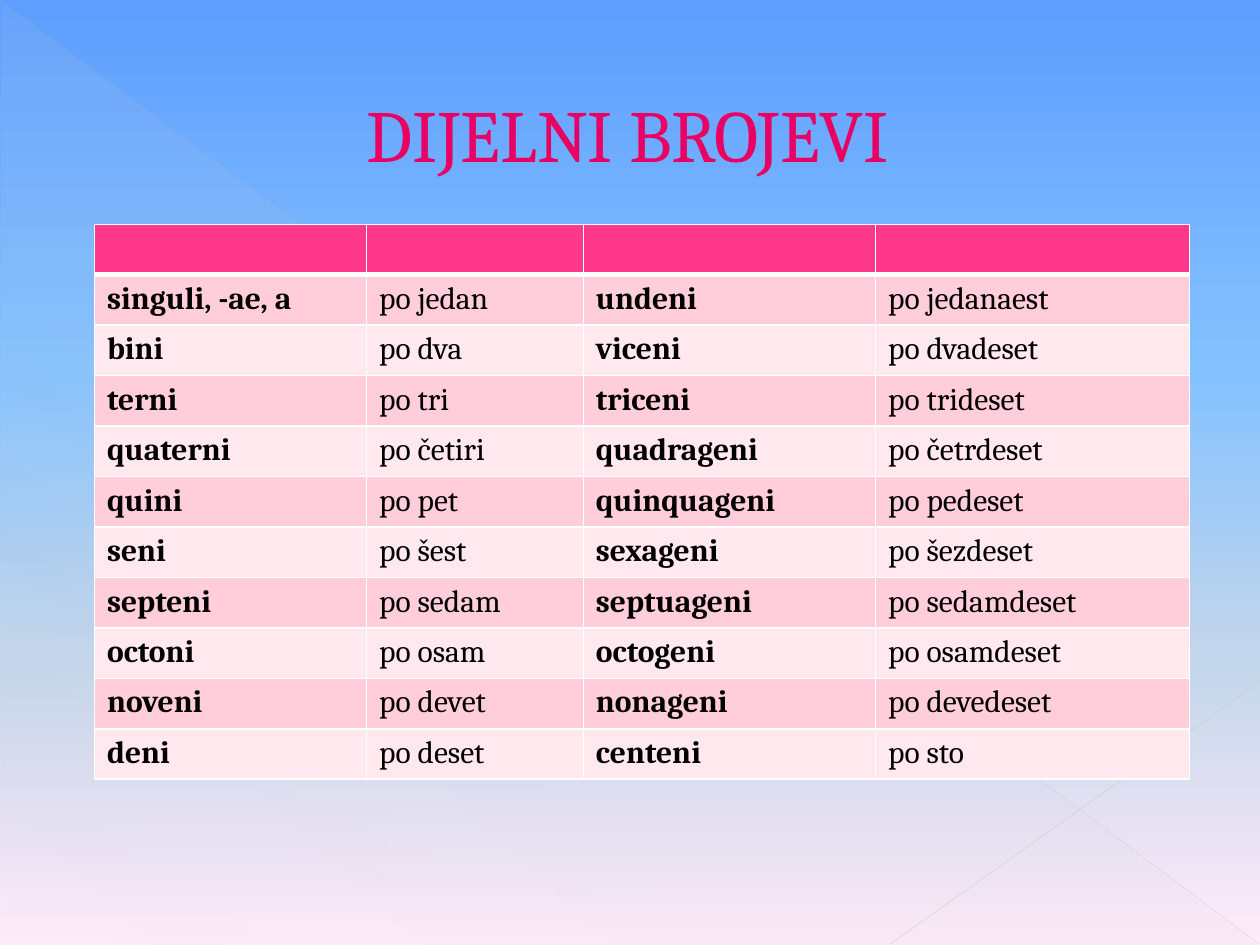
"""Build the slide on distributive numerals in Latin."""
from pptx import Presentation
from pptx.dml.color import RGBColor as RGB
from pptx.enum.shapes import MSO_CONNECTOR as Conn, MSO_SHAPE as Shape
from pptx.enum.text import MSO_ANCHOR as Anchor, PP_ALIGN as Align
from pptx.oxml.ns import qn
from pptx.util import Inches, Pt
from lxml.etree import SubElement as Sub, Element

TITLE = "DIJELNI BROJEVI"
ROWS = [
    ("singuli, -ae, a", "po jedan", "undeni", "po jedanaest"),
    ("bini", "po dva", "viceni", "po dvadeset"),
    ("terni", "po tri", "triceni", "po trideset"),
    ("quaterni", "po četiri", "quadrageni", "po četrdeset"),
    ("quini", "po pet", "quinquageni", "po pedeset"),
    ("seni", "po šest", "sexageni", "po šezdeset"),
    ("septeni", "po sedam", "septuageni", "po sedamdeset"),
    ("octoni", "po osam", "octogeni", "po osamdeset"),
    ("noveni", "po devet", "nonageni", "po devedeset"),
    ("deni", "po deset", "centeni", "po sto"),
]
COLS = (2.16, 1.72, 2.32, 2.49)
HIGH = 0.4
FONT = "Cambria"

ROSE = RGB(0xE9, 0x00, 0x62)
PLUM = RGB(0xB1, 0x27, 0x61)
PINK = RGB(0xFF, 0x38, 0x8C)
BANDS = (RGB(0xFF, 0xCE, 0xDA), RGB(0xFF, 0xE8, 0xEE))
BLACK = RGB(0, 0, 0)
WHITE = RGB(0xFF, 0xFF, 0xFF)
GREY = RGB(0xD2, 0xD2, 0xD2)
SKY = [
    (0, RGB(0x5E, 0x9E, 0xFF), 100),
    (40, RGB(0x85, 0xC2, 0xFF), 100),
    (70, RGB(0xC4, 0xD6, 0xEB), 100),
    (100, RGB(0xFF, 0xEB, 0xFA), 100),
]
HAZE = [(0, GREY, 10), (70, GREY, 8), (100, GREY, 1)]
LINES = [
    ((0, 0.01, 9.99, 7.49), RGB(0xBF, 0xBF, 0xBF), 0.39, 35),
    ((10, 5.41, 7.07, 7.49), RGB(0xC6, 0xC6, 0xC6), 0.47, 45),
]


def tint(node, color, alpha=100):
    """Add a colour with its opacity in percent."""
    clr = Sub(node, qn("a:srgbClr"), val=str(color))
    if alpha < 100:
        Sub(clr, qn("a:alpha"), val=str(alpha * 1000))


def grade(node, stops, angle):
    """Swap the solid fill of a node for a linear gradient."""
    grad = Element(qn("a:gradFill"), rotWithShape="1")
    group = Sub(grad, qn("a:gsLst"))
    for pos, color, alpha in stops:
        tint(Sub(group, qn("a:gs"), pos=str(pos * 1000)), color, alpha)
    Sub(grad, qn("a:lin"), ang=str(angle * 60000), scaled="0")
    node.replace(node.find(qn("a:solidFill")), grad)


def write(frame, text, size=18, color=BLACK, bold=False, align=Align.LEFT):
    """Put one formatted run in a text frame and return it."""
    para = frame.paragraphs[0]
    para.alignment = align
    run = para.add_run()
    run.text = text
    font = run.font
    font.name, font.size, font.bold = FONT, Pt(size), bold
    font.color.rgb = color
    return run


def stroke(tag, color, width):
    """Return a solid line element."""
    line = Element(qn(tag), w=str(Pt(width)))
    tint(Sub(line, qn("a:solidFill")), color)
    return line


def border(cell, top, low):
    """Draw the four white edges of a cell."""
    props = cell._tc.get_or_add_tcPr()
    edges = (("a:lnL", 1), ("a:lnR", 1), ("a:lnT", top), ("a:lnB", low))
    for spot, (tag, width) in enumerate(edges):
        props.insert(spot, stroke(tag, WHITE, width))


def scene(slide):
    """Paint the background, the haze and the thin lines."""
    slide.background.fill.solid()
    grade(slide.element.find(".//" + qn("p:bgPr")), SKY, 90)
    box = map(Inches, (0.01, 0.02, 9.98, 7.48))
    haze = slide.shapes.add_shape(Shape.RIGHT_TRIANGLE, *box)
    haze.shadow.inherit = False
    haze.line.fill.background()
    haze.fill.solid()
    grade(haze.element.spPr, HAZE, 133)
    for ends, color, width, alpha in LINES:
        link = slide.shapes.add_connector(Conn.STRAIGHT, *map(Inches, ends))
        link.line.width = Pt(width)
        link.line.color.rgb = color
        props = link.element.spPr
        fill = props.find(qn("a:ln")).find(qn("a:solidFill"))
        fill.clear()
        tint(fill, color, alpha)
        Sub(props, qn("a:effectLst"))


def head(slide):
    """Add the title."""
    box = slide.shapes.add_textbox(*map(Inches, (0.5, 0.29, 8.44, 1.53)))
    frame = box.text_frame
    frame.word_wrap = True
    frame.vertical_anchor = Anchor.MIDDLE
    run = write(frame, TITLE, size=42, color=ROSE, align=Align.CENTER)
    run.font._element.insert(0, stroke("a:ln", PLUM, 0.5))
    props = frame.paragraphs[0]._p.get_or_add_pPr()
    props.set("marL", str(Inches(0.53)))
    props.set("indent", "0")


def grid(slide):
    """Add the table of numerals."""
    count = len(ROWS) + 1
    box = map(Inches, (0.75, 1.78, sum(COLS), HIGH * count))
    table = slide.shapes.add_table(count, len(COLS), *box).table
    for col, width in zip(table.columns, COLS):
        col.width = Inches(width)
    for r, texts in enumerate([("",) * len(COLS)] + ROWS):
        table.rows[r].height = Inches(HIGH)
        for c, text in enumerate(texts):
            cell = table.cell(r, c)
            cell.fill.solid()
            cell.fill.fore_color.rgb = BANDS[(r - 1) % 2] if r else PINK
            border(cell, top=3 if r == 1 else 1, low=1 if r else 3)
            if text:
                write(cell.text_frame, text, bold=c % 2 == 0)


def main():
    """Make and save the deck."""
    deck = Presentation()
    deck.slide_width, deck.slide_height = Inches(10), Inches(7.5)
    slide = deck.slides.add_slide(deck.slide_layouts[6])
    scene(slide)
    head(slide)
    grid(slide)
    deck.save("out.pptx")


if __name__ == "__main__":
    main()
